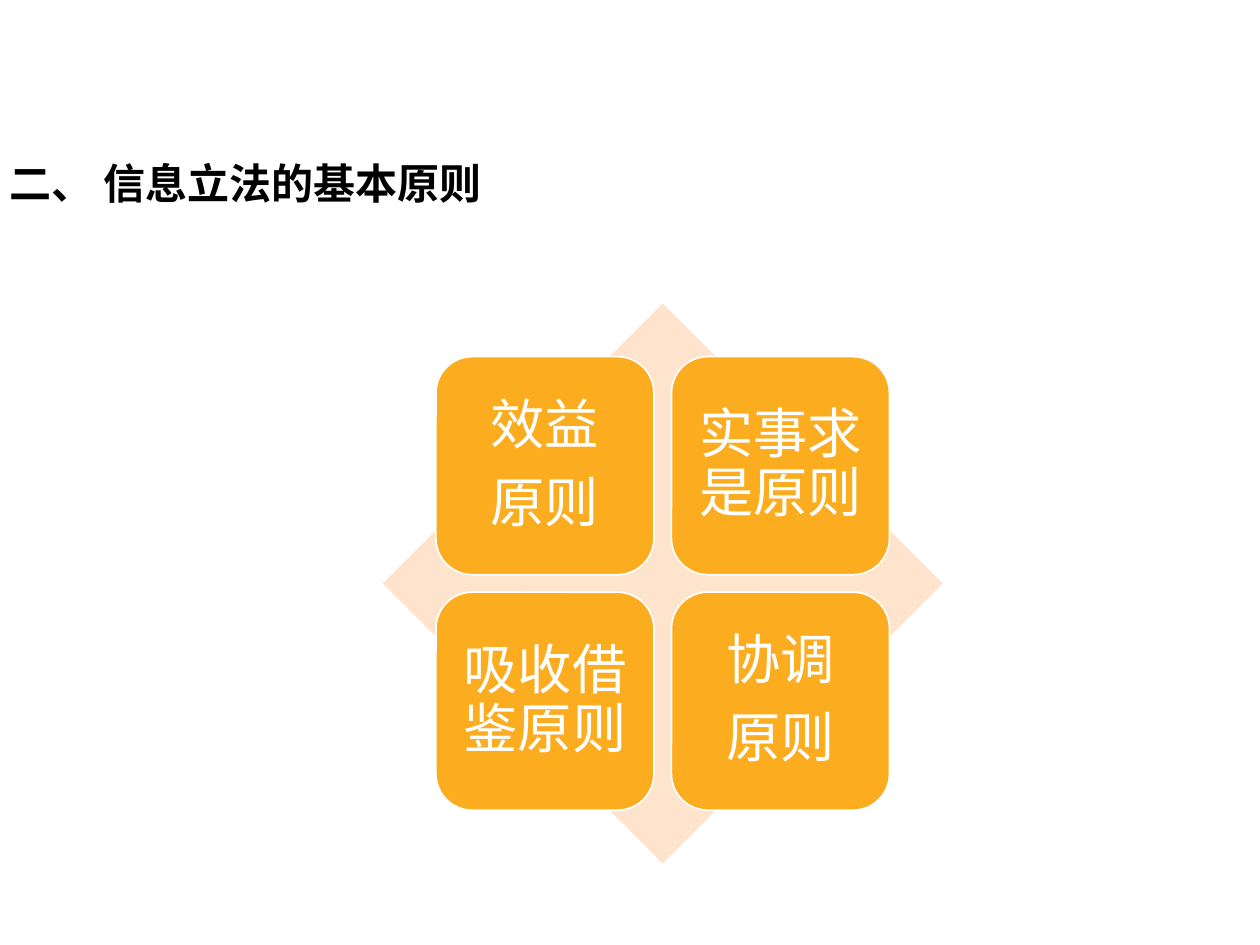
from pptx import Presentation
from pptx.dml.color import RGBColor
from pptx.enum.shapes import MSO_SHAPE
from pptx.enum.text import MSO_ANCHOR, PP_ALIGN
from pptx.util import Pt


def rgb(value):
    return RGBColor.from_string(value)


def write(tf, text, size, color, font, bold=False, align=PP_ALIGN.LEFT,
          spacing=None, after=None):
    """Fill a text frame, one paragraph for each line of text."""
    for i, line in enumerate(text.split("\n")):
        p = tf.add_paragraph() if i else tf.paragraphs[0]
        p.alignment = align
        p.line_spacing = spacing
        p.space_after = after
        r = p.add_run()
        r.text = line
        r.font.size = Pt(size)
        r.font.name = font
        r.font.bold = bold
        r.font.color.rgb = rgb(color)


class Deck:
    title_font, body_font = "DejaVu Sans", "Arial"
    black, white = "000000", "FFFFFF"
    accent, pale = "FCAC1F", "FEE3CD"

    def __init__(self, prs):
        self.s = prs.slides.add_slide(prs.slide_layouts[6])

    def title(self, text, x, y, w, h):
        tf = self.s.shapes.add_textbox(Pt(x), Pt(y), Pt(w), Pt(h)).text_frame
        tf.word_wrap = True
        write(tf, text, 24, self.black, self.title_font, bold=True)

    def shape(self, kind, x, y, size, fill, line=None):
        sp = self.s.shapes.add_shape(kind, Pt(x), Pt(y), Pt(size), Pt(size))
        sp.shadow.inherit = False
        sp.fill.solid()
        sp.fill.fore_color.rgb = rgb(fill)
        if line:
            sp.line.color.rgb = rgb(line)
            sp.line.width = Pt(1)
        else:
            sp.line.fill.background()
        return sp

    def tile(self, text, x, y, size):
        sp = self.shape(MSO_SHAPE.ROUNDED_RECTANGLE, x, y, size,
                        self.accent, self.white)
        tf = sp.text_frame
        tf.word_wrap = True
        tf.vertical_anchor = MSO_ANCHOR.MIDDLE
        tf.margin_left = tf.margin_right = Pt(9.4)
        tf.margin_top = tf.margin_bottom = Pt(9.4)
        write(tf, text, 31, self.white, self.body_font,
              align=PP_ALIGN.CENTER, spacing=0.9, after=Pt(11))


def main():
    prs = Presentation()
    prs.slide_width, prs.slide_height = Pt(720), Pt(540)
    deck = Deck(prs)

    # Heading
    deck.title("二、 信息立法的基本原则", -1.4, 86.4, 510.5, 65.5)

    # Diamond behind the matrix
    cx, cy, diamond = 378.7, 333.4, 320
    deck.shape(MSO_SHAPE.DIAMOND, cx - diamond / 2, cy - diamond / 2,
               diamond, deck.pale)

    # Two by two tiles, centred on the diamond
    tile, gap = 124.6, 10
    principles = ["效益\n原则", "实事求是原则", "吸收借鉴原则", "协调\n原则"]
    for i, text in enumerate(principles):
        row, col = divmod(i, 2)
        x = cx - tile - gap / 2 + col * (tile + gap)
        y = cy - tile - gap / 2 + row * (tile + gap)
        deck.tile(text, x, y, tile)

    prs.save("out.pptx")


if __name__ == "__main__":
    main()
